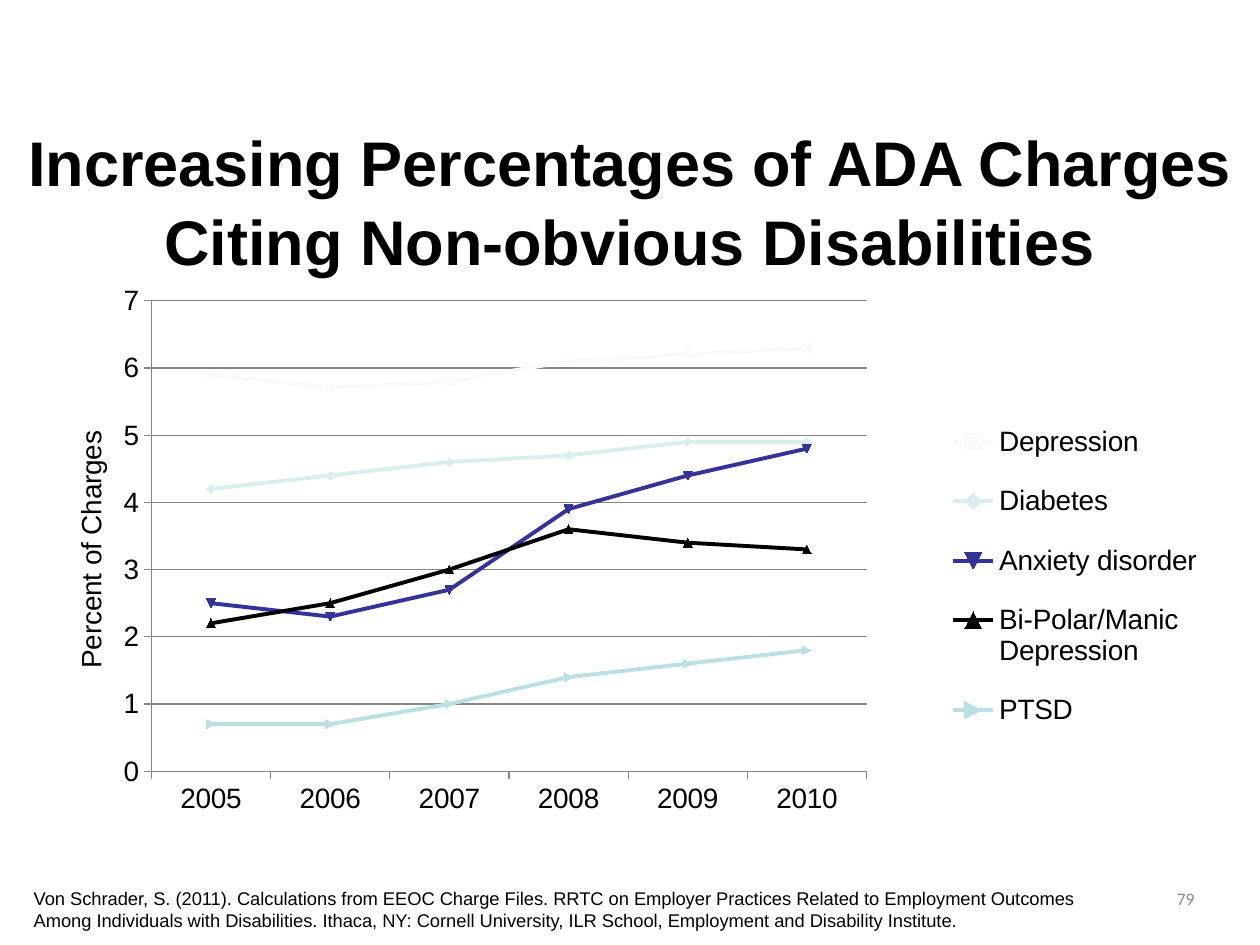
from lxml import etree
from pptx import Presentation
from pptx.chart.data import CategoryChartData
from pptx.dml.color import RGBColor
from pptx.enum.chart import XL_CHART_TYPE, XL_LEGEND_POSITION, XL_TICK_MARK
from pptx.enum.text import MSO_ANCHOR, MSO_AUTO_SIZE, PP_ALIGN
from pptx.oxml.ns import qn
from pptx.util import Cm, Pt

LINES = XL_CHART_TYPE.LINE_MARKERS
RIGHT = XL_LEGEND_POSITION.RIGHT
OUT, NONE = XL_TICK_MARK.OUTSIDE, XL_TICK_MARK.NONE
TOP, MID = MSO_ANCHOR.TOP, MSO_ANCHOR.MIDDLE
BLACK = RGBColor(0, 0, 0)
GREY = RGBColor(0x89, 0x89, 0x89)
RULE = RGBColor(0x86, 0x86, 0x86)
PALE = RGBColor(0xFA, 0xFA, 0xFA)
MIST = RGBColor(0xDA, 0xED, 0xEF)
NAVY = RGBColor(0x33, 0x33, 0x99)
TEAL = RGBColor(0xBB, 0xE0, 0xE3)

# Content
TITLE = "Increasing Percentages of ADA Charges Citing Non-obvious Disabilities"
SOURCE = (
    "Von Schrader, S. (2011). Calculations from EEOC Charge Files. "
    "RRTC on Employer Practices Related to Employment Outcomes Among "
    "Individuals with Disabilities. Ithaca, NY: Cornell University, "
    "ILR School, Employment and Disability Institute."
)
PAGE = "79"
YEARS = ["2005", "2006", "2007", "2008", "2009", "2010"]
SERIES = [
    ("Depression", PALE, (5.9, 5.7, 5.8, 6.1, 6.2, 6.3)),
    ("Diabetes", MIST, (4.2, 4.4, 4.6, 4.7, 4.9, 4.9)),
    ("Anxiety disorder", NAVY, (2.5, 2.3, 2.7, 3.9, 4.4, 4.8)),
    ("Bi-Polar/Manic Depression", BLACK, (2.2, 2.5, 3, 3.6, 3.4, 3.3)),
    ("PTSD", TEAL, (0.7, 0.7, 1, 1.4, 1.6, 1.8)),
]

# Places in cm: left, top, width, height
SPOTS = {
    "title": (0, 2.74, 25.4, 2.54),
    "source": (0.43, 17.75, 22.07, 1.19),
    "page": (19.05, 17.78, 5.28, 1.27),
    "chart": (1.37, 5.72, 24.03, 11.43),
}
# Shares of the chart: x, y, w, h
PLOT = (0.07, 0.03, 0.6, 0.83)
KEY = (0.73, 0.2, 0.23, 0.63)

# Formats
HEAD = {"name": "Arial", "size": Pt(36), "bold": True}
NOTE = {"name": "Arial", "size": Pt(10.5)}
FOLIO = {"name": "Calibri", "size": Pt(10)}
LABEL = {"name": "Arial", "size": Pt(16), "bold": False}


def spot(name):
    return [Cm(n) for n in SPOTS[name]]


def style(font, form, tint=BLACK):
    for key, val in form.items():
        setattr(font, key, val)
    font.color.rgb = tint


def write(shape, text, form, align, tint=BLACK, anchor=TOP):
    frame = shape.text_frame
    frame.text = text
    frame.word_wrap = True
    frame.auto_size = MSO_AUTO_SIZE.NONE
    frame.vertical_anchor = anchor
    para = frame.paragraphs[0]
    para.alignment = align
    style(para.runs[0].font, form, tint)
    return para


def layout(part, after, box, inner=False):
    """Pin a chart part to shares of the chart area."""
    for old in part.findall(qn("c:layout")):
        part.remove(old)
    node = etree.Element(qn("c:layout"))
    hand = etree.SubElement(node, qn("c:manualLayout"))
    rows = [("layoutTarget", "inner")] if inner else []
    rows += [("xMode", "edge"), ("yMode", "edge")]
    rows += [(tag, str(n)) for tag, n in zip("xywh", box)]
    for tag, val in rows:
        etree.SubElement(hand, qn("c:" + tag)).set("val", val)
    if after is None:
        part.insert(0, node)
    else:
        part.find(qn(after)).addnext(node)


deck = Presentation()
deck.slide_width, deck.slide_height = Cm(25.4), Cm(19.05)
slide = deck.slides.add_slide(deck.slide_layouts[5])

# Title
title = slide.shapes.title
title.left, title.top, title.width, title.height = spot("title")
head = write(title, TITLE, HEAD, PP_ALIGN.CENTER, anchor=MID)
head.line_spacing = 1.05

# Line chart
data = CategoryChartData(number_format="General")
data.categories = YEARS
for name, tint, vals in SERIES:
    data.add_series(name, vals)
chart = slide.shapes.add_chart(LINES, *spot("chart"), data).chart
chart.has_title = False
style(chart.font, LABEL)
plot = chart.plots[0]
plot.vary_by_categories = False
for line, (name, tint, vals) in zip(plot.series, SERIES):
    line.smooth = False
    line.format.line.color.rgb = tint
    line.format.line.width = Pt(2.25)
    mark = line.marker.format
    mark.fill.solid()
    mark.fill.fore_color.rgb = tint
    mark.line.color.rgb = tint

# Axes
years, share = chart.category_axis, chart.value_axis
for axis in (years, share):
    axis.major_tick_mark, axis.minor_tick_mark = OUT, NONE
    axis.format.line.color.rgb = RULE
    style(axis.tick_labels.font, LABEL)
share.minimum_scale, share.maximum_scale, share.major_unit = 0, 7, 1
share.has_major_gridlines = True
share.major_gridlines.format.line.color.rgb = RULE
frame = share.axis_title.text_frame
frame.text = "Percent of Charges"
style(frame.paragraphs[0].runs[0].font, LABEL)

# Legend and plot area
chart.has_legend = True
legend = chart.legend
legend.position = RIGHT
legend.include_in_layout = False
style(legend.font, LABEL)
root = chart.element
layout(root.find(".//" + qn("c:plotArea")), None, PLOT, inner=True)
layout(root.find(".//" + qn("c:legend")), "c:legendPos", KEY)

# Source and page number
note = slide.shapes.add_textbox(*spot("source"))
write(note, SOURCE, NOTE, PP_ALIGN.LEFT)
folio = slide.shapes.add_textbox(*spot("page"))
write(folio, PAGE, FOLIO, PP_ALIGN.RIGHT, GREY)

deck.save("out.pptx")
